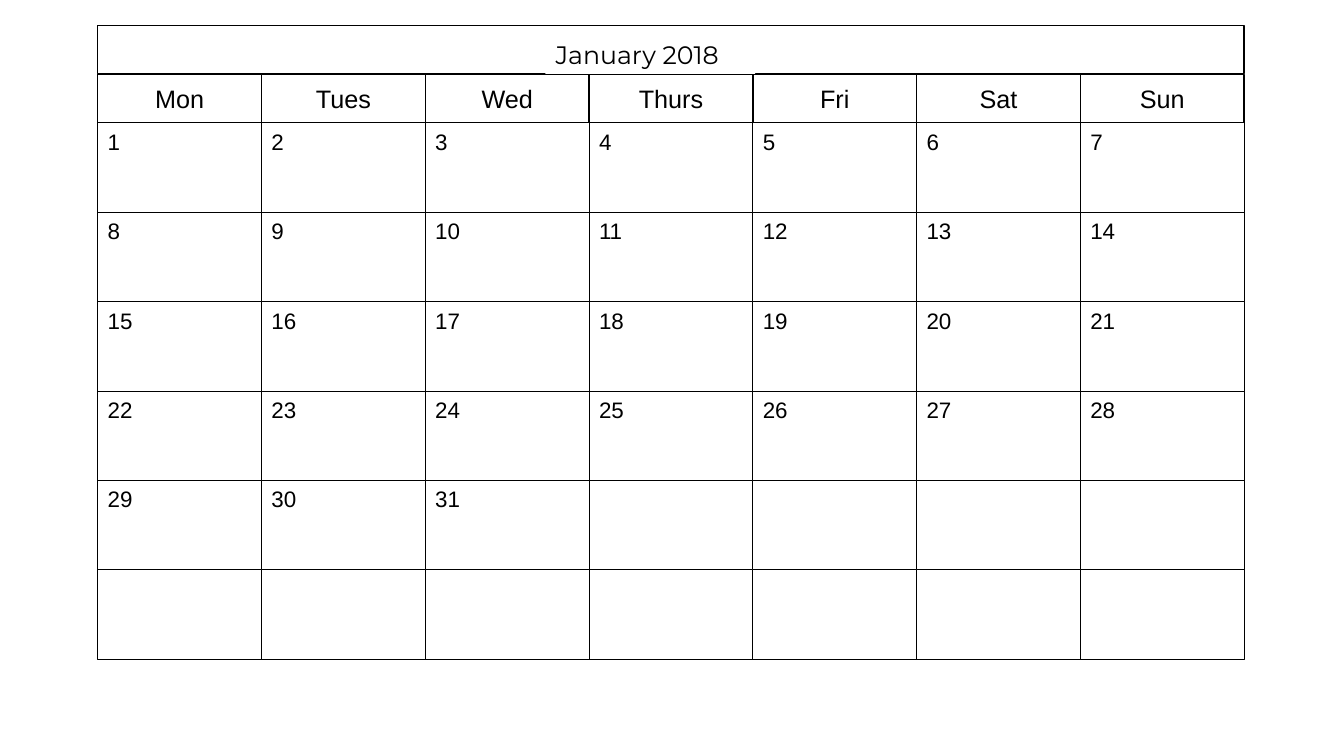
from pptx import Presentation
from pptx.dml.color import RGBColor
from pptx.enum.shapes import MSO_SHAPE
from pptx.enum.text import MSO_ANCHOR, MSO_AUTO_SIZE, PP_ALIGN
from pptx.util import Inches, Pt

MONTH = "January 2018"
WEEKDAYS = ["Mon", "Tues", "Wed", "Thurs", "Fri", "Sat", "Sun"]
DAYS_IN_MONTH = 31
WEEK_ROWS = 6

COLORS = {"paper": "FFFFFF", "ink": "000000"}
LEFT, TOP, WIDTH = 0.97, 0.25, 11.37
BANNER_HEIGHT = 0.48
HEADER_TOP, HEADER_HEIGHT = 0.74, 0.48
DAYS_TOP, DAYS_BOTTOM = 1.22, 6.54
COLUMN_WIDTH = WIDTH / len(WEEKDAYS)
ROW_HEIGHT = (DAYS_BOTTOM - DAYS_TOP) / WEEK_ROWS


def color(name):
    return RGBColor.from_string(COLORS[name])


def write(shape, text, size=16, font="Arial", align=PP_ALIGN.LEFT,
          anchor=MSO_ANCHOR.TOP, inset=0.05, wrap=True):
    frame = shape.text_frame
    frame.word_wrap = wrap
    frame.vertical_anchor = anchor
    frame.margin_left = frame.margin_right = Inches(0.1)
    frame.margin_top = frame.margin_bottom = Inches(inset)
    para = frame.paragraphs[0]
    para.alignment = align
    span = para.add_run()
    span.text = text
    span.font.size = Pt(size)
    span.font.name = font
    span.font.color.rgb = color("ink")


def add_cell(page, left, top, width, height, line_width):
    box = page.shapes.add_shape(MSO_SHAPE.RECTANGLE, Inches(left), Inches(top),
                                Inches(width), Inches(height))
    box.shadow.inherit = False
    box.fill.solid()
    box.fill.fore_color.rgb = color("paper")
    box.line.color.rgb = color("ink")
    box.line.width = Pt(line_width)
    return box


def add_month(page):
    banner = add_cell(page, LEFT, TOP, WIDTH, BANNER_HEIGHT, 1)
    title = page.shapes.title
    banner.element.addnext(title.element)  # bring the title in front of its banner
    title.left, title.top = Inches(5.41), Inches(0.34)
    title.width, title.height = Inches(2.08), Inches(0.4)
    title.fill.solid()
    title.fill.fore_color.rgb = color("paper")
    write(title, MONTH, size=18, font="Montserrat", wrap=False)
    title.text_frame.auto_size = MSO_AUTO_SIZE.SHAPE_TO_FIT_TEXT


def add_weekdays(page):
    for column, weekday in reversed(list(enumerate(WEEKDAYS))):
        box = add_cell(page, LEFT + column * COLUMN_WIDTH, HEADER_TOP,
                       COLUMN_WIDTH, HEADER_HEIGHT, 1)
        write(box, weekday, size=18, align=PP_ALIGN.CENTER,
              anchor=MSO_ANCHOR.MIDDLE, inset=0.02)


def add_days(page):
    for index in reversed(range(WEEK_ROWS * len(WEEKDAYS))):
        row, column = divmod(index, len(WEEKDAYS))
        box = add_cell(page, LEFT + column * COLUMN_WIDTH,
                       DAYS_TOP + row * ROW_HEIGHT, COLUMN_WIDTH, ROW_HEIGHT, 0.75)
        if index < DAYS_IN_MONTH:
            write(box, str(index + 1))


def main():
    deck = Presentation()
    deck.slide_width, deck.slide_height = Inches(13.33), Inches(7.5)
    page = deck.slides.add_slide(deck.slide_layouts.get_by_name("Title Only"))
    add_month(page)
    add_weekdays(page)
    add_days(page)
    deck.save("out.pptx")


if __name__ == "__main__":
    main()
